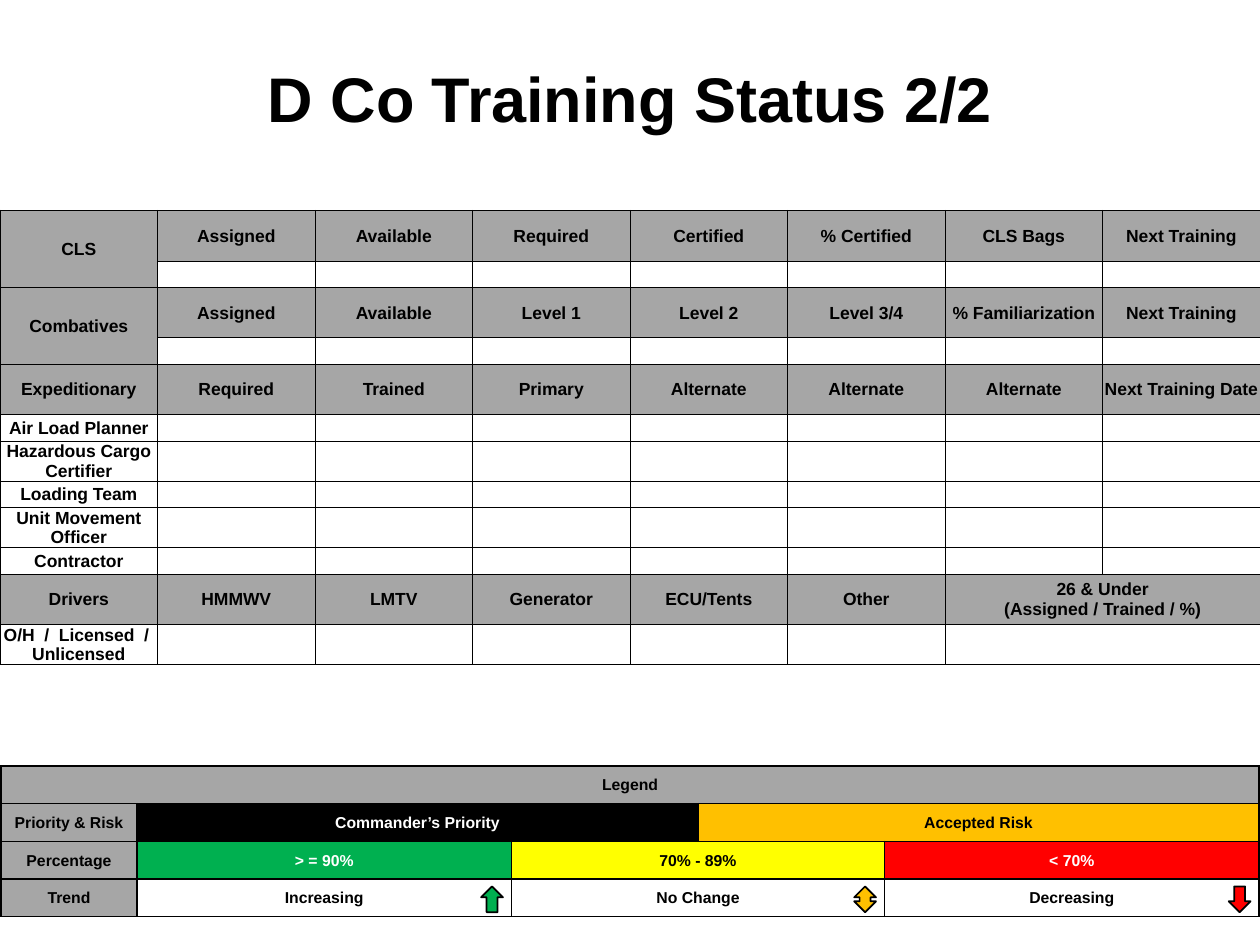
from lxml import etree
from pptx import Presentation
from pptx.dml.color import RGBColor
from pptx.enum import shapes, text
from pptx.oxml.ns import qn
from pptx.util import Cm, Pt

HUES = {"gray": "A6A6A6", "black": "000000", "white": "FFFFFF", "gold": "FFC000",
        "green": "00B050", "yellow": "FFFF00", "red": "FF0000"}
TITLE = "D Co Training Status 2/2"
HIGH, LOW, TALL = 1.02, 0.53, 0.81
STATUS = [
    (HIGH, ["CLS", "Assigned", "Available", "Required", "Certified",
            "% Certified", "CLS Bags", "Next Training"]),
    (LOW, []),
    (HIGH, ["Combatives", "Assigned", "Available", "Level 1", "Level 2",
            "Level 3/4", "% Familiarization", "Next Training"]),
    (LOW, []),
    (HIGH, ["Expeditionary", "Required", "Trained", "Primary", "Alternate",
            "Alternate", "Alternate", "Next Training Date"]),
    (LOW, ["Air Load Planner"]),
    (TALL, ["Hazardous Cargo Certifier"]),
    (LOW, ["Loading Team"]),
    (TALL, ["Unit Movement Officer"]),
    (LOW, ["Contractor"]),
    (HIGH, ["Drivers", "HMMWV", "LMTV", "Generator", "ECU/Tents", "Other",
            "26 & Under\n(Assigned / Trained / %)"]),
    (TALL, ["O/H  /  Licensed  /  Unlicensed"]),
]
JOINS = [(0, 0, 1, 0), (2, 0, 3, 0), (10, 6, 10, 7), (11, 6, 11, 7)]
LEGEND = [
    {0: ("Legend", "gray", "black")},
    {0: ("Priority & Risk", "gray", "black"),
     1: ("Commander’s Priority", "black", "white"), 3: ("Accepted Risk", "gold", "black")},
    {0: ("Percentage", "gray", "black"), 1: ("> = 90%", "green", "white"),
     2: ("70% - 89%", "yellow", "black"), 4: ("< 70%", "red", "white")},
    {0: ("Trend", "gray", "black"), 1: ("Increasing", None, "black"),
     2: ("No Change", None, "black"), 4: ("Decreasing", None, "black")},
]
TIES = [(0, 0, 0, 4), (1, 1, 1, 2), (1, 3, 1, 4), (2, 2, 2, 3), (3, 2, 3, 3)]
COLS = [2.74, 7.55, 3.76, 3.76, 7.55]
LEFT, TOP, STEP = 0.02, 15.44, 0.76
KIND = shapes.MSO_SHAPE
TRENDS = [(2, KIND.UP_ARROW, "green"), (4, KIND.UP_DOWN_ARROW, "gold"),
          (5, KIND.DOWN_ARROW, "red")]


def rgb(name):
    return RGBColor.from_string(HUES[name])


def write(frame, words, size=10, ink="black"):
    frame.text = words
    for par in frame.paragraphs:
        par.alignment = text.PP_ALIGN.CENTER
        for run in par.runs:
            font = run.font
            font.name, font.size, font.bold = "Arial", Pt(size), True
            font.color.rgb = rgb(ink)
        etree.SubElement(par._p, qn("a:endParaRPr"), sz=str(size * 100))


def edge(cell, width):
    props = cell._tc.get_or_add_tcPr()
    for side in "LRTB":
        line = etree.SubElement(props, qn("a:ln" + side), w=str(Pt(width)))
        fill = etree.SubElement(line, qn("a:solidFill"))
        etree.SubElement(fill, qn("a:srgbClr"), val=HUES["black"])


def grid(slide, left, top, cols, rows, joins, look, size, width):
    table = slide.shapes.add_table(len(rows), len(cols), Cm(left), Cm(top),
                                   Cm(sum(cols)), Cm(sum(rows))).table
    table.first_row = table.horz_banding = False
    for col, wide in zip(table.columns, cols):
        col.width = Cm(wide)
    for row, tall in zip(table.rows, rows):
        row.height = Cm(tall)
    for r in range(len(rows)):
        for c in range(len(cols)):
            cell = table.cell(r, c)
            words, fill, ink = look(r, c)
            cell.margin_left = cell.margin_right = cell.margin_top = Cm(0.02)
            cell.margin_bottom = 0
            cell.vertical_anchor = text.MSO_ANCHOR.MIDDLE
            write(cell.text_frame, words, size=size, ink=ink)
            edge(cell, width)
            if fill:
                cell.fill.solid()
                cell.fill.fore_color.rgb = rgb(fill)
            else:
                cell.fill.background()
    for r, c, down, over in joins:
        table.cell(r, c).merge(table.cell(down, over))


def status(r, c):
    tall, words = STATUS[r]
    return (words[c] if c < len(words) else "", "gray" if tall == HIGH else None, "black")


def legend(r, c):
    return LEGEND[r].get(c, ("", None, "black"))


def main():
    deck = Presentation()
    deck.slide_width, deck.slide_height = Cm(25.4), Cm(19.05)
    slide = deck.slides.add_slide(deck.slide_layouts[5])
    title = slide.shapes.title
    title.left, title.top, title.width, title.height = Cm(1.27), Cm(0.76), Cm(22.86), Cm(2.41)
    title.text_frame.vertical_anchor = text.MSO_ANCHOR.MIDDLE
    write(title.text_frame, TITLE, size=36)
    grid(slide, LEFT, TOP, COLS, [STEP] * len(LEGEND), TIES, legend, 9, 1)
    for count, kind, hue in TRENDS:
        right = LEFT + sum(COLS[:count])
        arrow = slide.shapes.add_shape(kind, Cm(right - 0.61), Cm(17.87), Cm(0.44), Cm(0.52))
        arrow.shadow.inherit = False
        arrow.fill.solid()
        arrow.fill.fore_color.rgb = rgb(hue)
        arrow.line.color.rgb = rgb("black")
        arrow.line.width = Pt(1)
    grid(slide, 0, 4.24, [25.4 / 8] * 8, [tall for tall, _ in STATUS], JOINS, status, 10, 0.5)
    deck.save("out.pptx")


if __name__ == "__main__":
    main()
